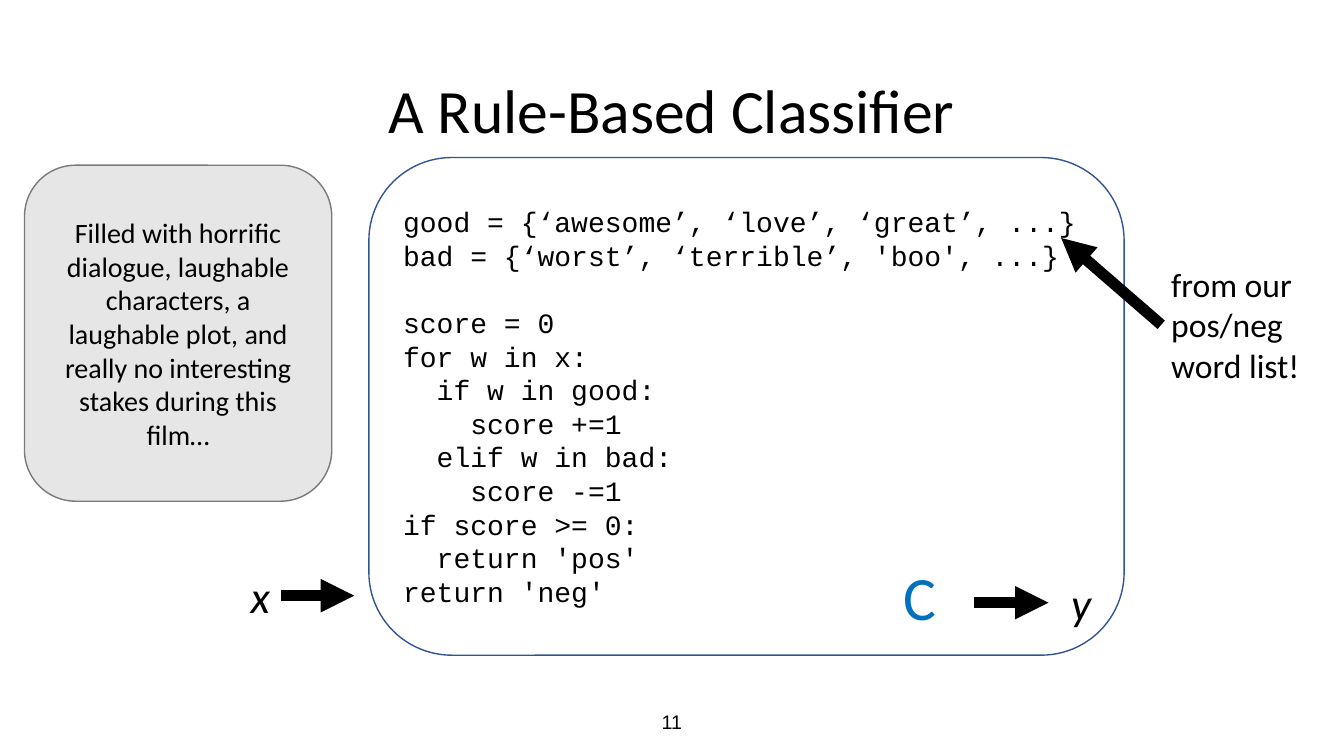
from dataclasses import dataclass

from lxml import etree
from pptx import Presentation
from pptx.dml.color import RGBColor
from pptx.enum import shapes, text
from pptx.oxml import ns
from pptx.util import Pt


@dataclass(frozen=True)
class Theme:
    """Colours, fonts and type sizes of the slide."""
    ink: str = "000000"
    paper: str = "FFFFFF"
    accent: str = "0070C0"
    frame: str = "325491"
    panel: str = "E7E6E6"
    panel_edge: str = "7A7A7A"
    body: str = "Calibri"
    mono: str = "Courier New"
    footer: str = "Arial"
    display: int = 44
    variable: int = 32
    note: int = 24
    copy: int = 20
    small: int = 14
    code_line: int = 24
    arrow: int = 8


T = Theme()
CENTER = text.PP_ALIGN.CENTER
LEFT = text.PP_ALIGN.LEFT
MIDDLE = text.MSO_ANCHOR.MIDDLE
TOP = text.MSO_ANCHOR.TOP

CODE = """good = {‘awesome’, ‘love’, ‘great’, ...}
bad = {‘worst’, ‘terrible’, 'boo', ...}

score = 0
for w in x:
  if w in good:
    score +=1
  elif w in bad:
    score -=1
if score >= 0:
  return 'pos'
return 'neg'"""

REVIEW = ("Filled with horrific dialogue, laughable characters, a laughable plot, "
          "and really no interesting stakes during this film…")


def write(sp, lines, size, font=T.body, color=T.ink, align=LEFT, anchor=TOP,
          wrap=True, italic=False):
    """Write one paragraph per line into a shape and return the paragraphs."""
    tf = sp.text_frame
    tf.word_wrap = wrap
    tf.vertical_anchor = anchor
    for i, line in enumerate(lines):
        p = tf.add_paragraph() if i else tf.paragraphs[0]
        p.alignment = align
        r = p.add_run()
        r.text = line
        r.font.size = Pt(size)
        r.font.name = font
        r.font.italic = italic
        r.font.color.rgb = RGBColor.from_string(color)
    return tf.paragraphs


def add_label(s, box, lines, size, **style):
    """Add a text box and return its paragraphs."""
    return write(s.shapes.add_textbox(*map(Pt, box)), lines, size, **style)


def add_panel(s, box, fill=None, edge=None):
    """Add a rounded rectangle with an optional fill and outline."""
    sp = s.shapes.add_shape(shapes.MSO_SHAPE.ROUNDED_RECTANGLE, *map(Pt, box))
    sp.shadow.inherit = False
    if fill:
        sp.fill.solid()
        sp.fill.fore_color.rgb = RGBColor.from_string(fill)
    else:
        sp.fill.background()
    if edge:
        sp.line.color.rgb = RGBColor.from_string(edge)
        sp.line.width = Pt(1)
    else:
        sp.line.fill.background()
    return sp


def add_arrow(s, x1, y1, x2, y2):
    """Add a thick arrow that points at the second end."""
    c = s.shapes.add_connector(shapes.MSO_CONNECTOR.STRAIGHT, *map(Pt, (x1, y1, x2, y2)))
    c.line.color.rgb = RGBColor.from_string(T.ink)
    c.line.width = Pt(T.arrow)
    etree.SubElement(c.line._get_or_add_ln(), ns.qn("a:tailEnd"), type="triangle")
    etree.SubElement(c._element.spPr, ns.qn("a:effectLst"))


def add_title(s, box):
    """Place the slide title."""
    p, = add_label(s, box, ["A Rule-Based Classifier"], T.display,
                   align=CENTER, anchor=MIDDLE)
    p.line_spacing = 0.9


def add_classifier(s, box):
    """Place the code panel with its name and the output arrow."""
    x, y, w, h = box
    blocks = [block.split("\n") for block in CODE.split("\n\n")]
    lines = [line for block in blocks for line in block]
    ps = write(add_panel(s, box, edge=T.frame), lines, T.copy, font=T.mono, anchor=MIDDLE)
    for p in ps:
        p.line_spacing = Pt(T.code_line)
    ps[len(blocks[0])].space_before = Pt(T.code_line)

    right, bottom = x + w, y + h
    name = add_panel(s, (right - 165, bottom - 68, 39, 51), fill=T.paper)
    write(name, ["C"], T.display, color=T.accent, align=CENTER, anchor=MIDDLE, wrap=False)
    add_arrow(s, right - 107, bottom - 37.5, right - 54, bottom - 37.5)
    add_label(s, (right - 45, bottom - 60.5, 29, 46), ["y"], T.variable,
              wrap=False, italic=True)


def add_input(s, box):
    """Place the input variable and its arrow across the box."""
    x, y, w, h = box
    add_label(s, (x, y, 29, h), ["x"], T.variable, wrap=False, italic=True)
    add_arrow(s, x + 29, y + h / 2, x + w, y + h / 2)


def add_note(s, box):
    """Place the word list remark and its arrow to the code."""
    x, y, w, h = box
    add_label(s, box, ["from our pos/neg", "word list!"], T.note)
    add_arrow(s, x, y + h / 2, x - 71.5, y - 15)


def add_review(s, box):
    """Place the sample review panel."""
    write(add_panel(s, box, T.panel, T.panel_edge), [REVIEW], T.copy,
          align=CENTER, anchor=MIDDLE)


def add_number(s, box):
    """Place the slide number."""
    add_label(s, box, ["11"], T.small, font=T.footer, align=CENTER, anchor=MIDDLE)


def main():
    """Build the slide and save it."""
    prs = Presentation()
    prs.slide_width, prs.slide_height = Pt(960), Pt(540)
    s = prs.slides.add_slide(prs.slide_layouts[6])
    add_title(s, (66, 29, 828, 104))
    add_classifier(s, (263.5, 112.5, 539.5, 355.5))
    add_input(s, (172, 402.5, 81, 46))
    add_note(s, (829.5, 185, 113, 94))
    add_number(s, (318, 501, 324, 29))
    add_review(s, (17.5, 118, 219.5, 240))
    prs.save("out.pptx")


if __name__ == "__main__":
    main()
